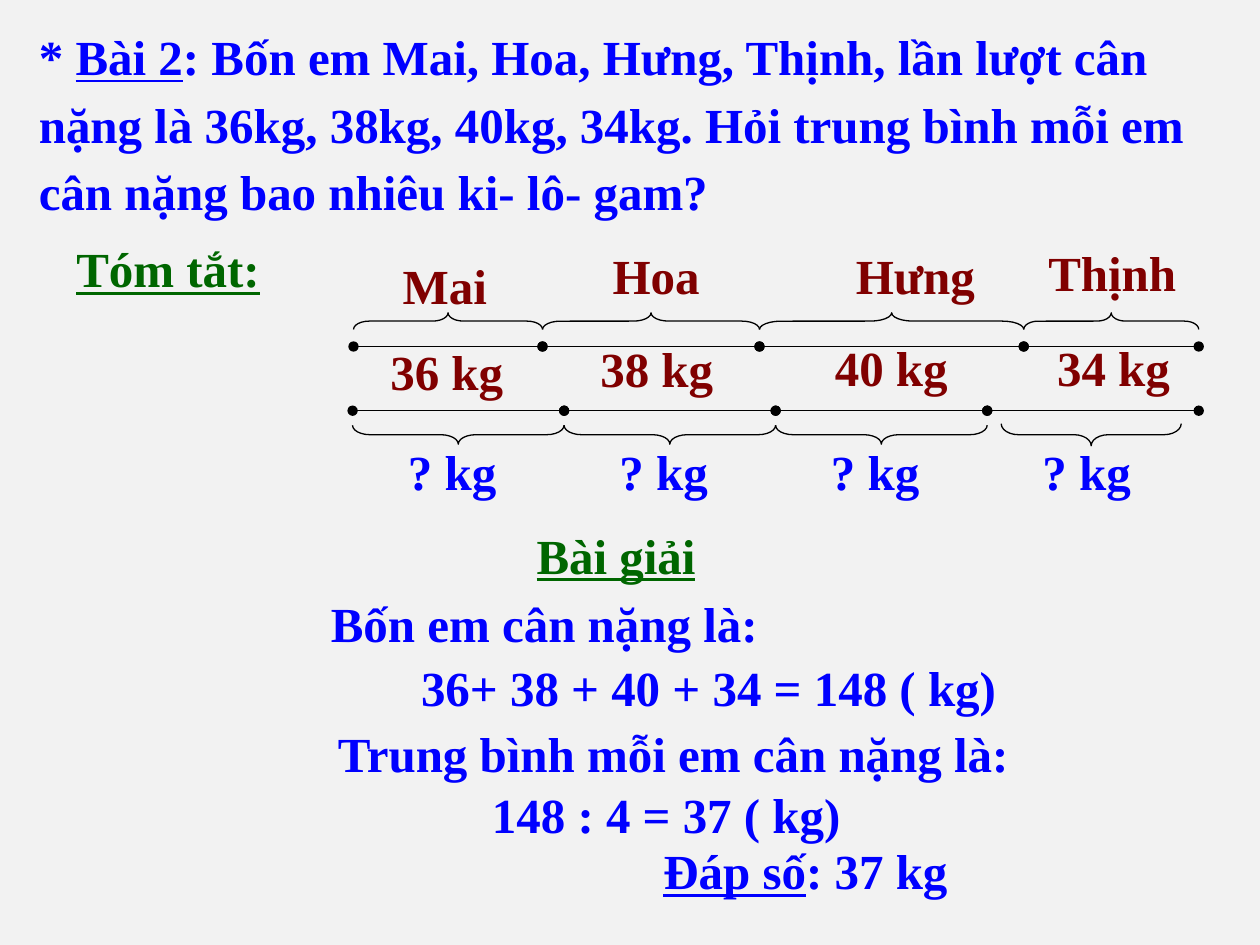
from collections import namedtuple
from dataclasses import dataclass
from itertools import pairwise

from lxml.etree import SubElement
from pptx import Presentation
from pptx.dml.color import RGBColor as RGB
from pptx.enum.shapes import MSO_CONNECTOR as LINK, MSO_SHAPE as SHAPE
from pptx.enum.text import MSO_ANCHOR as ANCHOR, MSO_AUTO_SIZE as FIT, PP_ALIGN as ALIGN
from pptx.oxml.ns import qn
from pptx.util import Pt

Box = namedtuple("Box", "x y w h")
Part = namedtuple("Part", "name mass w dx dy mass_dx mass_dy bend")


@dataclass(frozen=True)
class Theme:
    font: str = "Times New Roman"
    size: int = 28
    rule: float = 0.75
    paper: RGB = RGB(0xF2, 0xF2, 0xF2)
    ink: RGB = RGB(0, 0, 0)
    blue: RGB = RGB(0, 0, 0xFF)
    green: RGB = RGB(0, 0x66, 0)
    red: RGB = RGB(0x80, 0, 0)


THEME = Theme()

# Name and mass offsets are measured from the start of each segment.
PARTS = [
    Part("Mai", "36 kg", 108, 21, 12.5, 14, 61.5, 0.94),
    Part("Hoa", "38 kg", 124, 33, 6.5, 26, 60, 1.07),
    Part("Hưng", "40 kg", 151, 48, 6.5, 36, 59.5, 1.3),
    Part("Thịnh", "34 kg", 100, 7, 5, 12, 59.5, 0.87),
]


def fill_text(frame, pieces, color, spacing=1.0, align=ALIGN.LEFT):
    """Write (words, underlined) pieces as one paragraph of runs."""
    frame.word_wrap = True
    frame.auto_size = FIT.NONE
    frame.vertical_anchor = ANCHOR.TOP
    para = frame.paragraphs[0]
    para.alignment = align
    para.line_spacing = spacing
    for words, lined in pieces:
        run = para.add_run()
        run.text = words
        font = run.font
        font.name, font.size, font.bold = THEME.font, Pt(THEME.size), True
        font.underline = lined
        font.color.rgb = color


def add_text(slide, box, pieces, color, **style):
    shape = slide.shapes.add_textbox(*map(Pt, box))
    fill_text(shape.text_frame, pieces, color, **style)


def add_label(slide, x, y, words, color):
    add_text(slide, Box(x, y, 100, 41), [(words, False)], color)


def add_segment(slide, start, end, y):
    """Draw a line with a dot at each end."""
    line = slide.shapes.add_connector(LINK.STRAIGHT, Pt(start), Pt(y), Pt(end), Pt(y))
    line.line.color.rgb = THEME.ink
    line.line.width = Pt(THEME.rule)
    stroke = line.line._get_or_add_ln()
    for tag in ("a:headEnd", "a:tailEnd"):
        SubElement(stroke, qn(tag), type="oval")
    SubElement(line._element.spPr, qn("a:effectLst"))


def add_brace(slide, start, end, y, depth, turn, bend):
    """Draw a brace lying on its side, centred on height y."""
    span = end - start
    x = (start + end - depth) / 2
    box = Box(x, y - span / 2, depth, span)
    brace = slide.shapes.add_shape(SHAPE.LEFT_BRACE, *map(Pt, box))
    brace.rotation = turn
    brace.adjustments[0] = bend
    brace.shadow.inherit = False
    brace.fill.background()
    brace.line.color.rgb = THEME.ink
    brace.line.width = Pt(THEME.rule)


def place_problem(slide, box):
    title = slide.shapes.title
    title.left, title.top, title.width, title.height = map(Pt, box)
    fill_text(title.text_frame, [
        ("* ", False),
        ("Bài 2", True),
        (": Bốn em Mai, Hoa, Hưng, Thịnh, lần lượt cân nặng là 36kg, 38kg, 40kg, 34kg. "
         "Hỏi trung bình mỗi em cân nặng bao nhiêu ki- lô- gam?", False),
    ], THEME.blue, spacing=1.15)


def place_masses(slide, box):
    start = box.x
    for part in PARTS:
        end = start + part.w
        add_segment(slide, start, end, box.y + 68)
        add_brace(slide, start, end, box.y + 53.5, 9.5, 90, part.bend)
        add_label(slide, start + part.dx, box.y + part.dy, part.name, THEME.red)
        add_label(slide, start + part.mass_dx, box.y + part.mass_dy, part.mass, THEME.red)
        start = end


def place_shares(slide, box):
    step = box.w / len(PARTS)
    marks = [box.x + step * i for i in range(len(PARTS) + 1)]
    for start, end in pairwise(marks):
        add_segment(slide, start, end, box.y)
        last = end == marks[-1]
        inset, depth, bend = (8, 12.6, 0.78) if last else (0, 10.8, 0.92)
        stop = end - 10 if last else end
        add_brace(slide, start + inset, stop, box.y + 13.7, depth, 270, bend)
        add_label(slide, start + 24.5, box.y + 14.3, "? kg", THEME.blue)


def place_answer(slide, box):
    x, y = box.x, box.y
    blue = THEME.blue
    add_text(slide, Box(x + 149.5, y, 146, 41), [("Bài giải", True)], THEME.green)
    add_text(slide, Box(x, y + 45.5, 322, 35), [("Bốn em cân nặng là:", False)],
             blue, spacing=0.8, align=ALIGN.CENTER)
    add_text(slide, Box(x + 83.5, y + 75.5, 350, 41),
             [("36+ 38 + 40 + 34 = 148 ( kg)", False)], blue)
    add_text(slide, Box(x + 36, y + 120, 405, 35),
             [("Trung bình mỗi em cân nặng là:", False)], blue, spacing=0.8)
    add_text(slide, Box(x + 124, y + 148.5, 348, 41), [("148 : 4 = 37 ( kg)", False)], blue)
    add_text(slide, Box(x + 222, y + 187, 302, 35),
             [("Đáp số", True), (": 37 kg", False)], blue, spacing=0.8)


def main():
    deck = Presentation()
    deck.slide_width, deck.slide_height = Pt(720), Pt(540)
    slide = deck.slides.add_slide(deck.slide_layouts[5])
    slide.background.fill.solid()
    slide.background.fill.fore_color.rgb = THEME.paper
    place_problem(slide, Box(15, 6.5, 708, 121))
    add_text(slide, Box(36.5, 133, 145, 41), [("Tóm tắt:", True)], THEME.green)
    place_masses(slide, Box(202, 130, 483, 100))
    place_shares(slide, Box(201.5, 234.7, 483.5, 60))
    place_answer(slide, Box(150, 296.5, 524, 222))
    deck.save("out.pptx")


if __name__ == "__main__":
    main()
